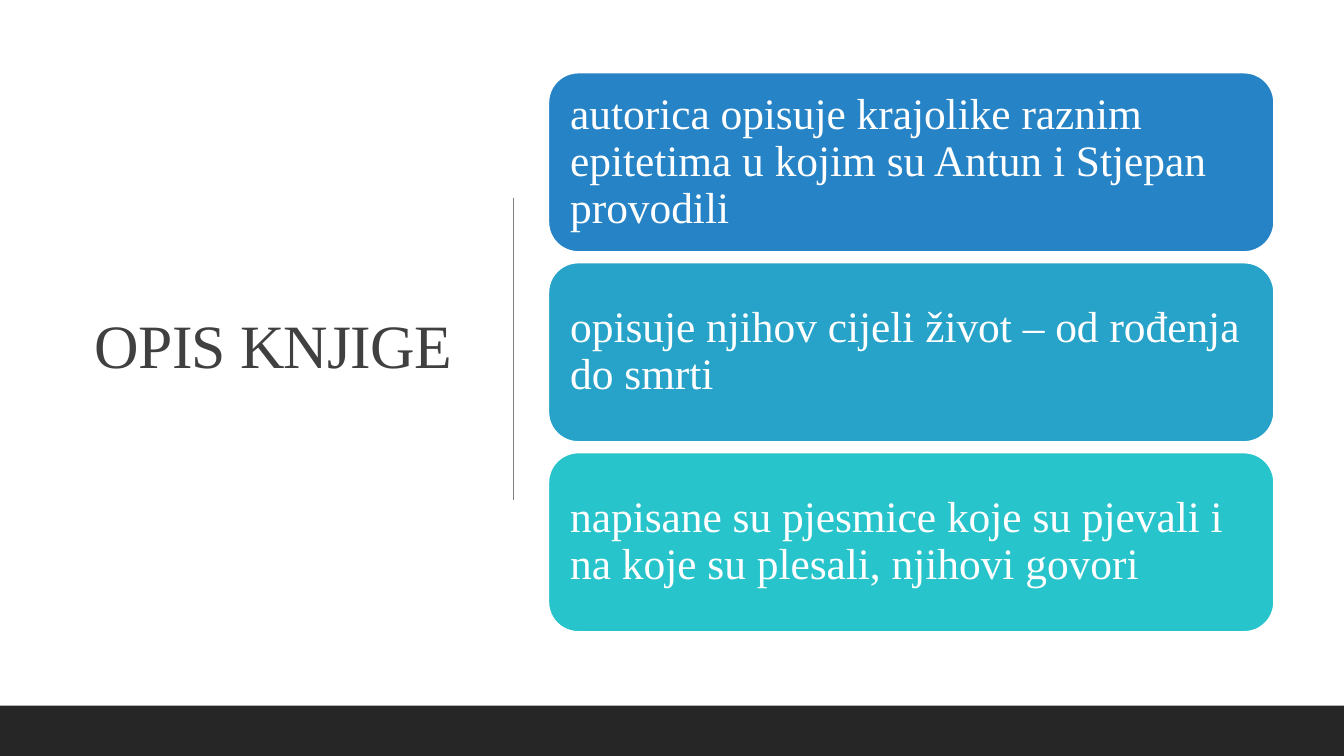
from pptx import Presentation
from pptx.dml.color import RGBColor
from pptx.enum.shapes import MSO_CONNECTOR, MSO_SHAPE
from pptx.enum.text import MSO_ANCHOR, MSO_AUTO_SIZE, PP_ALIGN
from pptx.oxml.ns import qn
from pptx.util import Inches, Pt
from lxml import etree

RECT, ROUND = MSO_SHAPE.RECTANGLE, MSO_SHAPE.ROUNDED_RECTANGLE
STRAIGHT = MSO_CONNECTOR.STRAIGHT
MIDDLE, FIXED = MSO_ANCHOR.MIDDLE, MSO_AUTO_SIZE.NONE
LEFT, RIGHT = PP_ALIGN.LEFT, PP_ALIGN.RIGHT

WHITE = RGBColor(0xFF, 0xFF, 0xFF)
INK = RGBColor(0x40, 0x40, 0x40)
GRAY = RGBColor(0x80, 0x80, 0x80)
DARK = RGBColor(0x26, 0x26, 0x26)
BLUE = RGBColor(0x26, 0x83, 0xC6)
AZURE = RGBColor(0x27, 0xA3, 0xC9)
TEAL = RGBColor(0x28, 0xC4, 0xCC)

CARDS = [
    ("autorica opisuje krajolike raznim epitetima u kojim su Antun i Stjepan provodili", BLUE),
    ("opisuje njihov cijeli život – od rođenja do smrti", AZURE),
    ("napisane su pjesmice koje su pjevali i na koje su plesali, njihovi govori", TEAL),
]
CARD_TOP, CARD_STEP, CARD_HIGH = 9.6, 25.13, 23.73


class Deck:
    """Draws styled elements on one slide, with lengths in percent of its size."""

    font = "Times New Roman"

    def __init__(self):
        self.show = Presentation()
        self.show.slide_width = Inches(13.33)
        self.show.slide_height = Inches(7.5)
        self.slide = self.show.slides.add_slide(self.show.slide_layouts[5])

    def place(self, x, y):
        return int(self.show.slide_width * x / 100), int(self.show.slide_height * y / 100)

    def label(self, frame, text, size, color, align):
        frame.word_wrap = True
        frame.auto_size = FIXED
        frame.vertical_anchor = MIDDLE
        para = frame.paragraphs[0]
        para.alignment = align
        para.line_spacing = 0.9
        run = para.add_run()
        run.text = text
        run.font.name = self.font
        run.font.size = Pt(size)
        run.font.color.rgb = color
        return run

    def title(self, text, x, y, wide, high):
        head = self.slide.shapes.title
        head.left, head.top = self.place(x, y)
        head.width, head.height = self.place(wide, high)
        run = self.label(head.text_frame, text, 44, INK, RIGHT)
        run.font._element.set("spc", "-50")

    def box(self, kind, x, y, wide, high, fill):
        shape = self.slide.shapes.add_shape(kind, *self.place(x, y), *self.place(wide, high))
        shape.shadow.inherit = False
        shape.fill.solid()
        shape.fill.fore_color.rgb = fill
        shape.line.fill.background()
        return shape

    def card(self, text, x, y, wide, high, fill):
        shape = self.box(ROUND, x, y, wide, high, fill)
        shape.line.color.rgb = WHITE
        shape.line.width = Pt(1.25)
        frame = shape.text_frame
        frame.margin_left = frame.margin_right = Inches(0.13)
        frame.margin_top = frame.margin_bottom = Inches(0.13)
        self.label(frame, text, 31, WHITE, LEFT)

    def rule(self, x, top, end):
        line = self.slide.shapes.add_connector(STRAIGHT, *self.place(x, top), *self.place(x, end))
        line.line.color.rgb = GRAY
        line.line.width = Pt(1)
        etree.SubElement(line._element.spPr, qn("a:effectLst"))


def main():
    deck = Deck()
    deck.title("OPIS KNJIGE ", 5.25, 9.2, 30.25, 73.7)
    deck.rule(38.2, 26.13, 66.13)
    deck.box(RECT, 0, 93.33, 100, 6.67, DARK)
    for row, (text, fill) in enumerate(CARDS):
        deck.card(text, 40.8, CARD_TOP + row * CARD_STEP, 54, CARD_HIGH, fill)
    deck.show.save("out.pptx")


if __name__ == "__main__":
    main()
